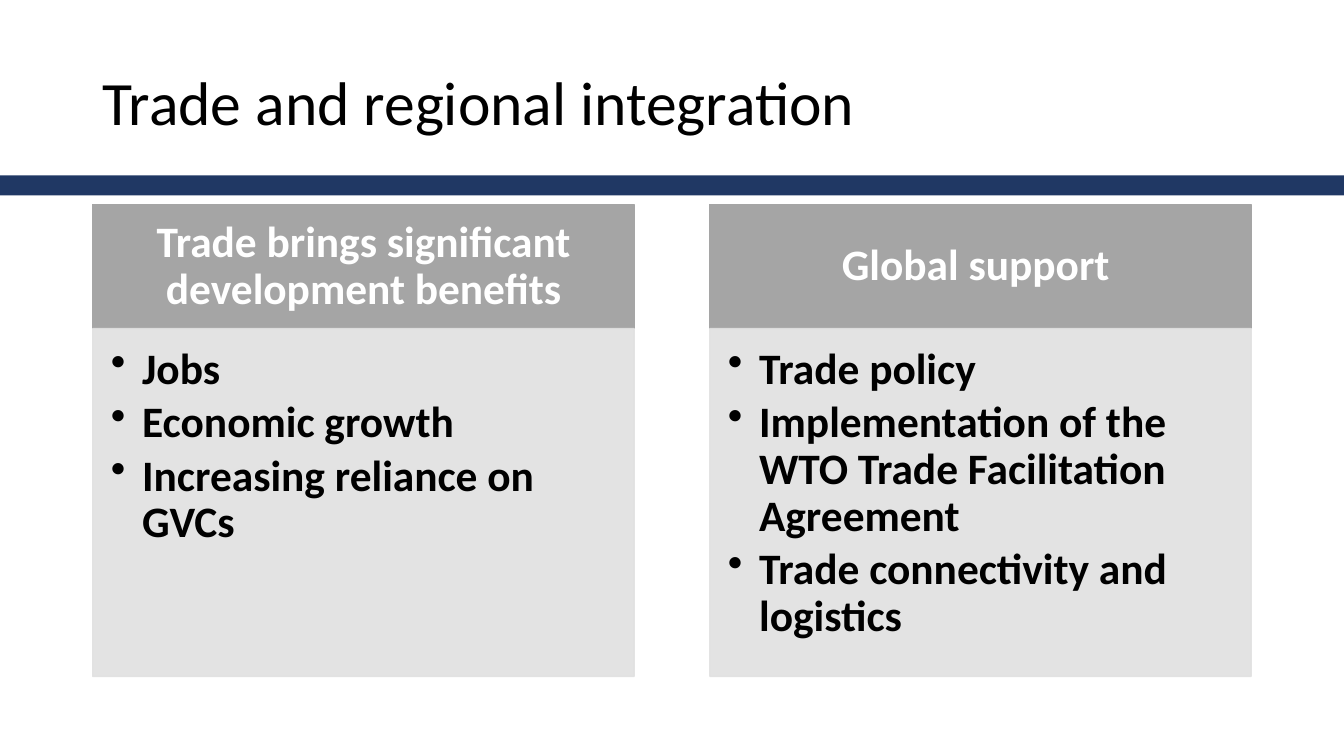
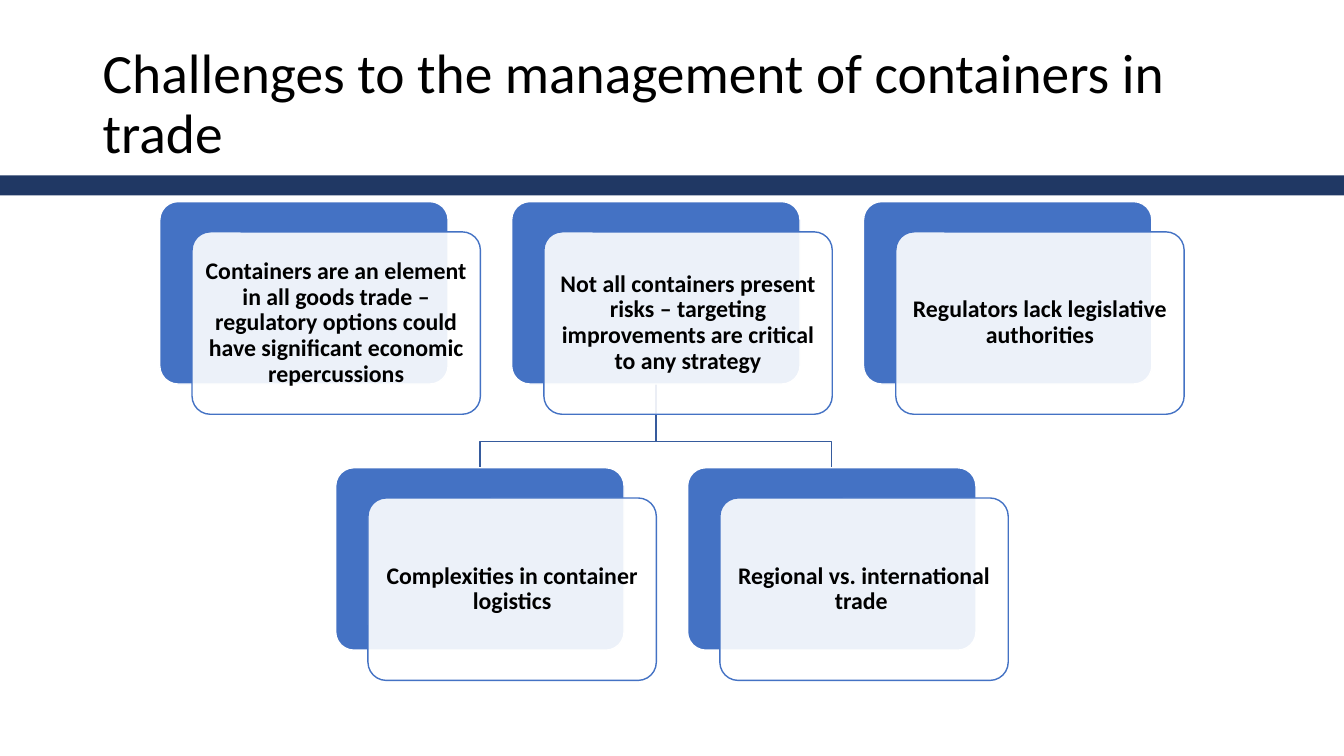
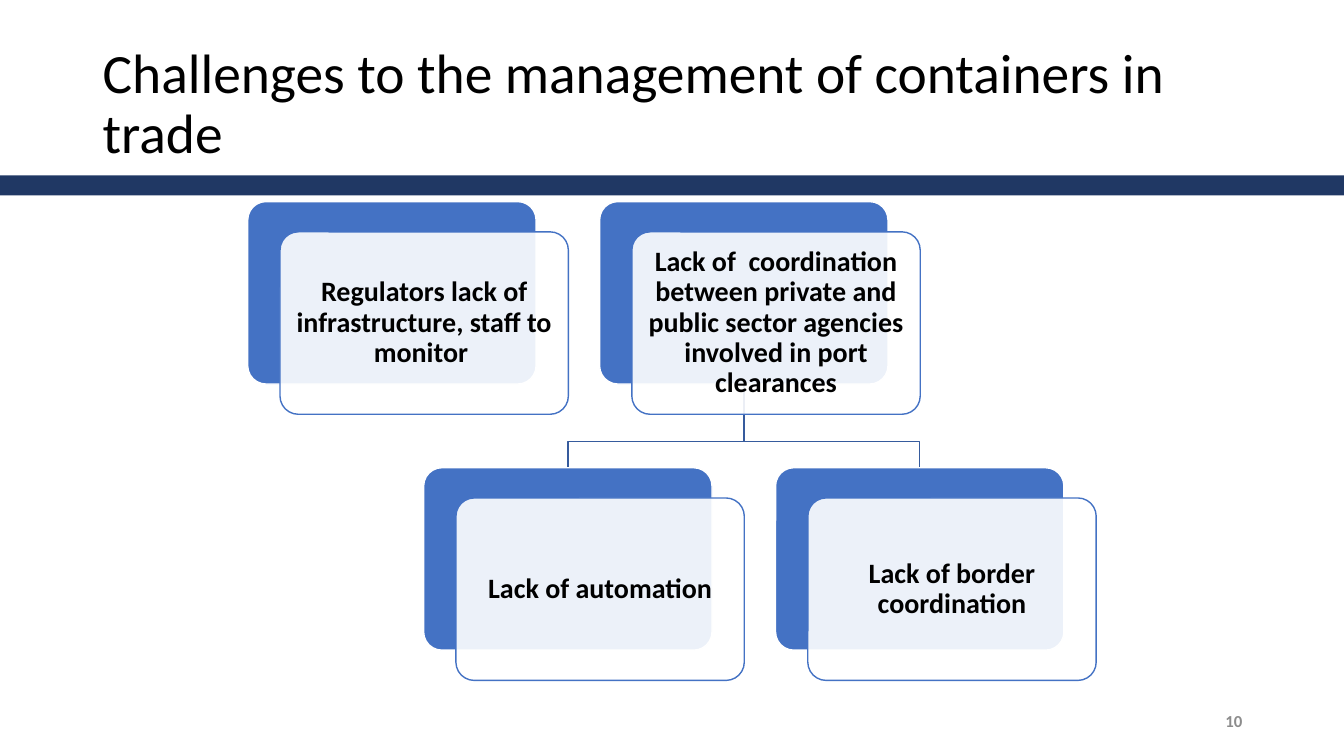
import pptx
import pptx.dml.color
import pptx.enum.shapes
import pptx.enum.text
import pptx.oxml
import pptx.oxml.ns
import pptx.util
from dataclasses import dataclass

Inches = pptx.util.Inches
Pt = pptx.util.Pt
Shapes = pptx.enum.shapes.MSO_SHAPE
Align = pptx.enum.text.PP_ALIGN
Anchor = pptx.enum.text.MSO_ANCHOR


@dataclass(frozen=True)
class Theme:
    font: str = "Calibri"
    black: str = "000000"
    white: str = "FFFFFF"
    band: str = "203864"
    header: str = "A5A5A5"
    panel: str = "E1E1E1"
    card: str = "4472C4"
    branch: str = "365B9D"
    number: str = "8C8C8C"
    panel_size: float = 31
    number_size: float = 12
    line_spacing: float = 0.9
    opacity: int = 90


theme = Theme()

WIDTH, HEIGHT = 13.33, 7.5
TITLE = (0.92, 0.4, 11.5, 1.29)
BAND = (0, 1.74, WIDTH, 0.2)
PAGE_NUMBER = (9.42, 6.95, 3, 0.4)

PANEL_LEFT, PANEL_TOP, PANEL_WIDTH, PANEL_PITCH = 0.92, 2.03, 5.37, 6.12
HEADER_HEIGHT, BODY_HEIGHT = 1.23, 3.45
BULLET_INDENT = 0.31

CARD_WIDTH, CARD_HEIGHT = 2.86, 1.81
CARD_SHIFT_X, CARD_SHIFT_Y = 0.32, 0.3
CARD_TOP, COLUMN_PITCH, ROW_PITCH = 2.0, 3.49, 2.64
BRANCH_DROP = 0.57

COLUMNS_SLIDE = {
    "title": "Trade and regional integration",
    "title_size": 44,
    "panels": [
        (
            "Trade brings significant development benefits",
            ["Jobs", "Economic growth", "Increasing reliance on GVCs"],
        ),
        (
            "Global support ",
            [
                "Trade policy",
                "Implementation of the WTO Trade Facilitation Agreement",
                "Trade connectivity and logistics",
            ],
        ),
    ],
}

CHALLENGES = "Challenges to the management of containers in trade"

TREE_SLIDES = [
    {
        "title": CHALLENGES,
        "title_size": 39.6,
        "card_size": 17,
        "inset": 0.07,
        "top_row": [
            "Containers are an element in all goods trade – regulatory options "
            "could have significant economic repercussions",
            "Not all containers present risks – targeting improvements are "
            "critical to any strategy",
            "Regulators lack legislative authorities",
        ],
        "parent": 1,
        "children": [
            "Complexities in container logistics",
            "Regional vs. international trade ",
        ],
        "number": None,
    },
    {
        "title": CHALLENGES,
        "title_size": 39.6,
        "card_size": 20,
        "inset": 0.08,
        "top_row": [
            "Regulators lack of infrastructure, staff to monitor ",
            "Lack of  coordination between private and public sector agencies "
            "involved in port clearances",
        ],
        "parent": 1,
        "children": ["Lack of automation", "Lack of border coordination"],
        "number": "10",
    },
]


def color(value):
    return pptx.dml.color.RGBColor.from_string(value)


def set_opacity(color_format_parent, percent):
    for element in color_format_parent.iter(pptx.oxml.ns.qn("a:srgbClr")):
        alpha = element.makeelement(
            pptx.oxml.ns.qn("a:alpha"), {"val": str(percent * 1000)}
        )
        element.append(alpha)


def add_box(slide, kind, place, fill, line=None):
    shape = slide.shapes.add_shape(kind, *map(Inches, place))
    shape.shadow.inherit = False
    shape.fill.solid()
    shape.fill.fore_color.rgb = color(fill)
    if line:
        shape.line.color.rgb = color(line)
        shape.line.width = Pt(1)
    else:
        shape.line.fill.background()
    return shape


def write(shape, lines, size, ink, bold=False, align=Align.LEFT,
          anchor=Anchor.MIDDLE, insets=(0.1, 0.05, 0.1, 0.05),
          spacing=theme.line_spacing, bullets=False):
    frame = shape.text_frame
    frame.word_wrap = True
    frame.vertical_anchor = anchor
    (frame.margin_left, frame.margin_top,
     frame.margin_right, frame.margin_bottom) = map(Inches, insets)
    frame.text = "\n".join(lines)
    for paragraph in frame.paragraphs:
        paragraph.alignment = align
        paragraph.line_spacing = spacing
        if bullets:
            add_bullet(paragraph)
            paragraph.space_after = Pt(size * 0.15)
        for run in paragraph.runs:
            run.font.name = theme.font
            run.font.size = Pt(size)
            run.font.bold = bold
            run.font.color.rgb = color(ink)


def add_bullet(paragraph):
    properties = paragraph._p.get_or_add_pPr()
    properties.set("marL", str(Inches(BULLET_INDENT)))
    properties.set("indent", str(-Inches(BULLET_INDENT)))
    bullet = properties.makeelement(pptx.oxml.ns.qn("a:buChar"), {"char": "•"})
    properties.append(bullet)


def add_slide(presentation, content):
    slide = presentation.slides.add_slide(presentation.slide_layouts[6])
    add_box(slide, Shapes.RECTANGLE, BAND, theme.band)
    title = slide.shapes.add_textbox(*map(Inches, TITLE))
    write(title, [content["title"]], content["title_size"], theme.black)
    return slide


def add_panel(slide, left, heading, points):
    header = add_box(
        slide, Shapes.RECTANGLE,
        (left, PANEL_TOP, PANEL_WIDTH, HEADER_HEIGHT),
        theme.header, theme.header,
    )
    write(header, [heading], theme.panel_size, theme.white, bold=True,
          align=Align.CENTER, insets=(0.24, 0.14, 0.24, 0.14))
    body = add_box(
        slide, Shapes.RECTANGLE,
        (left, PANEL_TOP + HEADER_HEIGHT, PANEL_WIDTH, BODY_HEIGHT),
        theme.panel, theme.panel,
    )
    set_opacity(body._element.spPr, theme.opacity)
    write(body, points, theme.panel_size, theme.black, bold=True,
          anchor=Anchor.TOP, insets=(0.18, 0.18, 0.24, 0.27), bullets=True)


def add_branch(slide, parent_left, child_left):
    start_x = parent_left + CARD_WIDTH / 2
    end_x = child_left + CARD_WIDTH / 2
    start_y = CARD_TOP + CARD_HEIGHT
    bend_y = start_y + BRANCH_DROP
    end_y = CARD_TOP + ROW_PITCH
    builder = slide.shapes.build_freeform(Inches(start_x), Inches(start_y))
    corners = [(start_x, bend_y), (end_x, bend_y), (end_x, end_y)]
    builder.add_line_segments(
        [(Inches(x), Inches(y)) for x, y in corners], close=False
    )
    branch = builder.convert_to_shape()
    branch.shadow.inherit = False
    branch.fill.background()
    branch.line.color.rgb = color(theme.branch)
    branch.line.width = Pt(1)


def add_card(slide, left, top, text, size, inset):
    back = add_box(
        slide, Shapes.ROUNDED_RECTANGLE,
        (left, top, CARD_WIDTH, CARD_HEIGHT), theme.card, theme.white,
    )
    front = add_box(
        slide, Shapes.ROUNDED_RECTANGLE,
        (left + CARD_SHIFT_X, top + CARD_SHIFT_Y, CARD_WIDTH, CARD_HEIGHT),
        theme.white, theme.card,
    )
    for shape in (back, front):
        shape.adjustments[0] = 0.1
    set_opacity(front._element.spPr.find(pptx.oxml.ns.qn("a:solidFill")),
                theme.opacity)
    write(front, [text], size, theme.black, bold=True,
          align=Align.CENTER, insets=(inset,) * 4)


def add_tree(slide, content):
    top_row, children = content["top_row"], content["children"]
    first_child = content["parent"] - (len(children) - 1) / 2
    last_column = max(len(top_row) - 1, first_child + len(children) - 1)
    tree_width = last_column * COLUMN_PITCH + CARD_WIDTH + CARD_SHIFT_X
    tree_left = (WIDTH - tree_width) / 2

    def column_left(column):
        return tree_left + column * COLUMN_PITCH

    for index in range(len(children)):
        add_branch(slide, column_left(content["parent"]),
                   column_left(first_child + index))
    rows = [(0, CARD_TOP, top_row), (first_child, CARD_TOP + ROW_PITCH, children)]
    for first_column, top, texts in rows:
        for index, text in enumerate(texts):
            add_card(slide, column_left(first_column + index), top, text,
                     content["card_size"], content["inset"])


def main():
    presentation = pptx.Presentation()
    presentation.slide_width = Inches(WIDTH)
    presentation.slide_height = Inches(HEIGHT)

    slide = add_slide(presentation, COLUMNS_SLIDE)
    for index, (heading, points) in enumerate(COLUMNS_SLIDE["panels"]):
        add_panel(slide, PANEL_LEFT + index * PANEL_PITCH, heading, points)

    for content in TREE_SLIDES:
        slide = add_slide(presentation, content)
        add_tree(slide, content)
        if content["number"]:
            number = slide.shapes.add_textbox(*map(Inches, PAGE_NUMBER))
            write(number, [content["number"]], theme.number_size, theme.number,
                  bold=True, align=Align.RIGHT, spacing=1.0)

    presentation.save("out.pptx")


if __name__ == "__main__":
    main()
